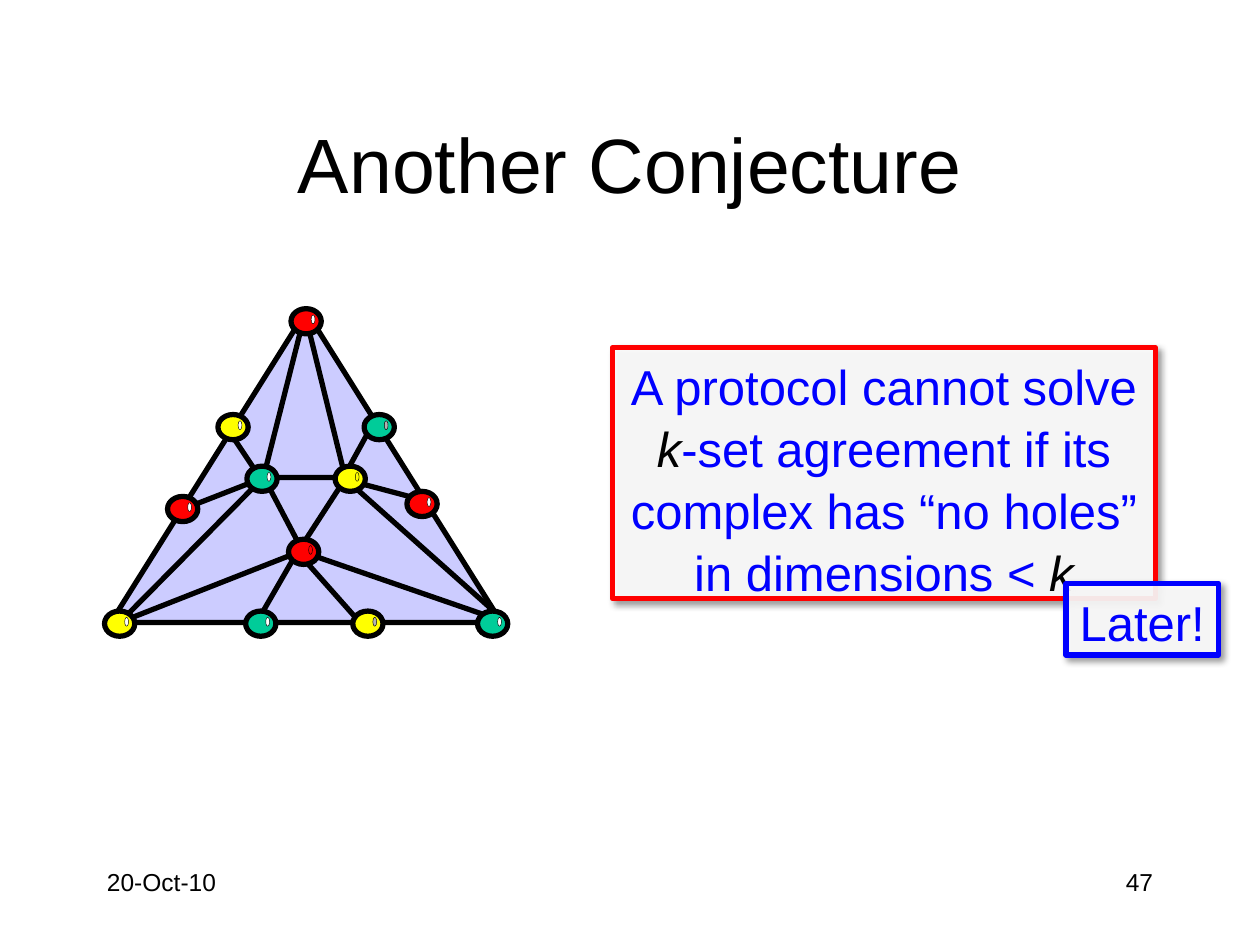
from lxml.etree import SubElement
from pptx import Presentation
from pptx.dml.color import RGBColor
from pptx.enum.shapes import MSO_CONNECTOR, MSO_SHAPE
from pptx.enum.text import MSO_ANCHOR, MSO_AUTO_SIZE, PP_ALIGN
from pptx.oxml.ns import qn
from pptx.util import Inches, Pt

COLORS = {
    "black": "000000", "white": "FFFFFF", "blue": "0000FF", "red": "FF0000",
    "yellow": "FFFF00", "green": "00CC99", "gray": "B2B2B2", "lavender": "CCCCFF",
}


def rgb(name):
    return RGBColor.from_string(COLORS[name])


def lengths(*values):
    return [Inches(value) for value in values]


class SlideBuilder:
    font = "Arial"
    line_width = 3
    node_size = (0.24, 0.2)
    glint_size = (0.03, 0.07)
    glint_offset = (0.16, 0.05)

    def __init__(self, slide):
        self.slide = slide
        self.complex = slide.shapes.add_group_shape().shapes

    def outline(self, part, color="black", width=line_width):
        part.line.color.rgb = rgb(color)
        part.line.width = Pt(width)

    def add_runs(self, frame, runs, size, align=PP_ALIGN.LEFT, spacing=None, **frame_format):
        """Fill a text frame with (text, color, italic) runs."""
        for name, value in frame_format.items():
            setattr(frame, name, value)
        paragraph = frame.paragraphs[0]
        paragraph.alignment = align
        paragraph.line_spacing = spacing
        for text, color, italic in runs:
            run = paragraph.add_run()
            run.text = text
            run.font.color.rgb = rgb(color)
            font_format = {"name": self.font, "size": Pt(size), "italic": italic}
            for name, value in font_format.items():
                setattr(run.font, name, value)

    def title(self, text, box):
        title = self.slide.shapes.title
        for name, value in zip(("left", "top", "width", "height"), lengths(*box)):
            setattr(title, name, value)
        self.add_runs(title.text_frame, [(text, "black", False)], 44, PP_ALIGN.CENTER,
                      vertical_anchor=MSO_ANCHOR.MIDDLE)

    def label(self, text, box, align):
        label = self.slide.shapes.add_textbox(*lengths(*box))
        self.add_runs(label.text_frame, [(text, "black", False)], 14, align, word_wrap=True)

    def callout(self, runs, box, border, wrap=True):
        callout = self.slide.shapes.add_shape(MSO_SHAPE.RECTANGLE, *lengths(*box))
        callout.fill.solid()
        callout.fill.fore_color.rgb = rgb("white")
        self.outline(callout, border)
        callout.shadow.inherit = False
        # Translucent fill and soft shadow
        properties = callout._element.spPr
        fill_color = properties.find(qn("a:solidFill")).find(qn("a:srgbClr"))
        SubElement(fill_color, qn("a:alpha"), val="90000")
        shadow = SubElement(properties.find(qn("a:effectLst")), qn("a:outerShdw"),
                            blurRad=str(Pt(4)), dist=str(Pt(3)), dir="2700000",
                            algn="tl", rotWithShape="0")
        shadow_color = SubElement(shadow, qn("a:srgbClr"), val=COLORS["black"])
        SubElement(shadow_color, qn("a:alpha"), val="40000")
        self.add_runs(callout.text_frame, runs, 28, PP_ALIGN.CENTER, 1.05, word_wrap=wrap,
                      auto_size=MSO_AUTO_SIZE.SHAPE_TO_FIT_TEXT,
                      vertical_anchor=MSO_ANCHOR.TOP)

    def solid(self, kind, box, fill, width=line_width):
        solid = self.complex.add_shape(kind, *lengths(*box))
        solid.fill.solid()
        solid.fill.fore_color.rgb = rgb(fill)
        solid.shadow.inherit = False
        self.outline(solid, width=width)

    def face(self, start, *corners):
        builder = self.complex.build_freeform(*lengths(*start), scale=1.0)
        builder.add_line_segments([lengths(*corner) for corner in corners], close=True)
        face = builder.convert_to_shape()
        face.fill.background()
        face.shadow.inherit = False
        self.outline(face)

    def edge(self, start, end):
        edge = self.complex.add_connector(MSO_CONNECTOR.STRAIGHT, *lengths(*start, *end))
        self.outline(edge)
        SubElement(edge._element.spPr, qn("a:effectLst"))

    def node(self, left, top, fill, glint):
        self.solid(MSO_SHAPE.OVAL, (left, top, *self.node_size), fill)
        dx, dy = self.glint_offset
        self.solid(MSO_SHAPE.OVAL, (left + dx, top + dy, *self.glint_size), glint, 0.25)


def main():
    deck = Presentation()
    deck.slide_width, deck.slide_height = lengths(10, 7.5)
    builder = SlideBuilder(deck.slides.add_slide(deck.slide_layouts[5]))

    # Title, date and page number
    builder.title("Another Conjecture", (0.75, 0.67, 8.5, 1.25))
    builder.label("20-Oct-10", (0.75, 6.83, 2.08, 0.5), PP_ALIGN.LEFT)
    builder.label("47", (7.17, 6.83, 2.08, 0.5), PP_ALIGN.RIGHT)

    # Subdivided triangle: outline and inner faces
    builder.solid(MSO_SHAPE.ISOSCELES_TRIANGLE, (0.88, 2.47, 3.1, 2.47), "lavender")
    builder.face((2.4, 4.37), (2.1, 3.8), (2.08, 3.8), (0.95, 4.94))
    builder.face((2.74, 3.8), (2.37, 4.37), (4.02, 4.94))
    builder.face((2.09, 3.79), (2.74, 3.79), (2.42, 2.49))

    # Edges from each inner vertex to the boundary
    spokes = {
        (2.36, 4.38): [(2.83, 4.91), (2.02, 4.97)],
        (2.72, 3.8): [(3.36, 3.97), (2.95, 3.38)],
        (2.07, 3.8): [(1.83, 3.44), (1.48, 4.03)],
    }
    for center, ends in spokes.items():
        for end in ends:
            builder.edge(center, end)

    # Vertices: left, top, color, glint color
    vertices = [
        (3.79, 4.85, "green", "white"),
        (2.8, 4.85, "yellow", "gray"),
        (1.95, 4.85, "green", "white"),
        (0.83, 4.85, "yellow", "white"),
        (3.23, 3.9, "red", "white"),
        (1.33, 3.94, "red", "white"),
        (2.29, 4.28, "red", "red"),
        (2.66, 3.7, "yellow", "yellow"),
        (1.96, 3.7, "green", "white"),
        (2.31, 2.45, "red", "white"),
        (2.89, 3.29, "green", "gray"),
        (1.73, 3.29, "yellow", "white"),
    ]
    for vertex in vertices:
        builder.node(*vertex)

    # Conjecture and remark
    conjecture = [
        ("A protocol cannot solve ", "blue", False),
        ("k", "black", True),
        ("-set agreement if its complex has “no holes” in dimensions < ", "blue", False),
        ("k", "black", True),
    ]
    builder.callout(conjecture, (4.86, 2.76, 4.31, 1.99), "red")
    builder.callout([("Later!", "blue", False)], (8.46, 4.63, 1.21, 0.57), "blue", wrap=False)

    deck.save("out.pptx")


if __name__ == "__main__":
    main()
